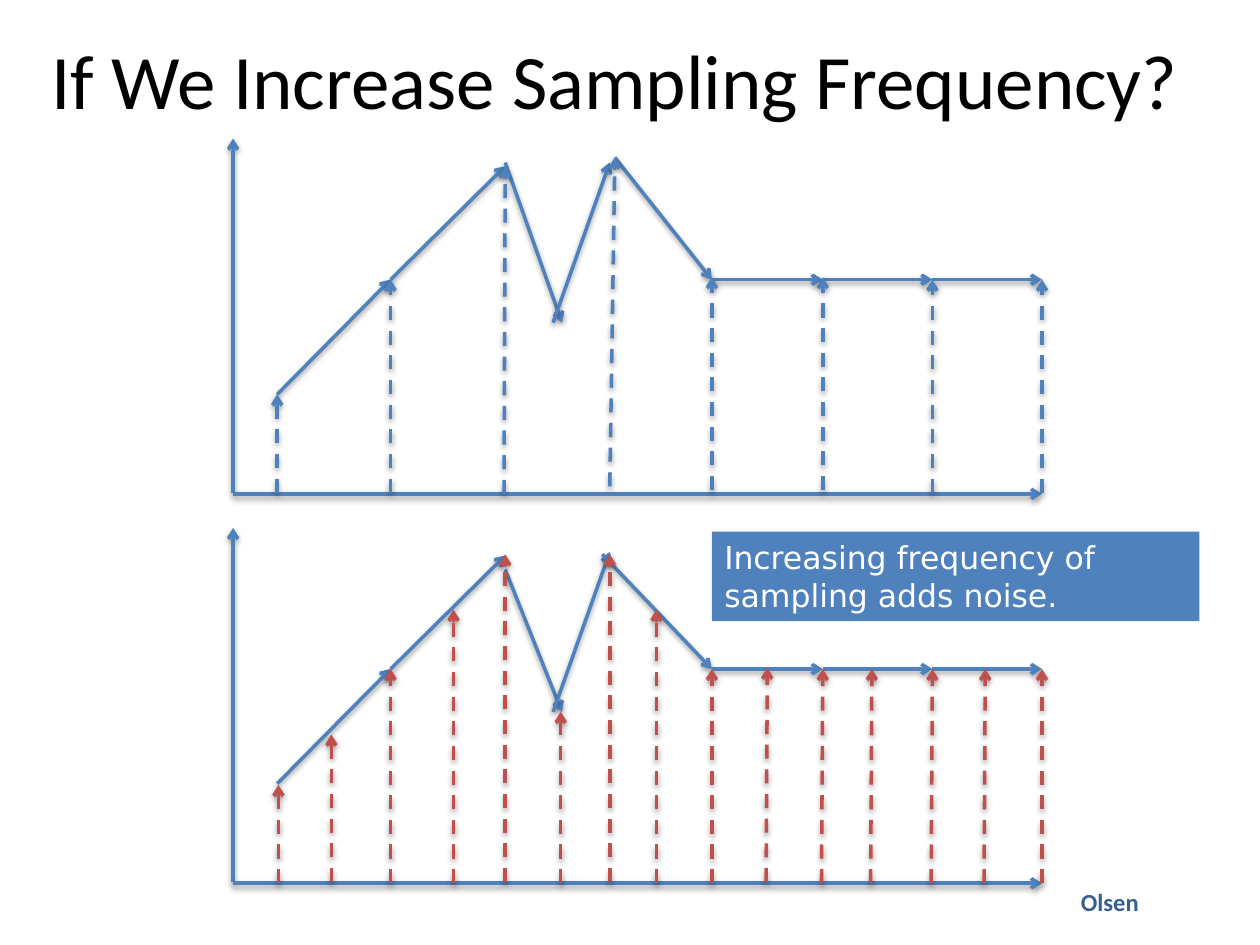
import pptx
import pptx.util
import pptx.dml.color
import pptx.enum.dml
import pptx.enum.shapes
import pptx.enum.text
import pptx.oxml
import pptx.oxml.ns

COLORS = {"blue": "4F81BD", "red": "C0504D", "navy": "365F91",
          "black": "000000", "white": "FFFFFF"}
CELL = 0.1  # inches; the slide is 100 columns by 75 rows
COLS, ROWS = 100, 75
LEFT, RIGHT, HIGH = 18.5, 82.7, 28.2  # extent of both plots

SHADOW = (
    f'<a:effectLst {pptx.oxml.ns.nsdecls("a")}>'
    '<a:outerShdw blurRad="40000" dist="20000" dir="5400000" rotWithShape="0">'
    '<a:srgbClr val="000000"><a:alpha val="38000"/></a:srgbClr>'
    '</a:outerShdw></a:effectLst>')
ARROW = f'<a:tailEnd {pptx.oxml.ns.nsdecls("a")} type="arrow"/>'

# All plot points: column, rows above the time axis.
RISE = [(22, 7.9), (31, 17), (40.1, 26)]
REBOUND = [(43.9, 13.6), (48.4, 26.3)]
FLAT = [(56.5, 17), (65.3, 17), (74, 17), (82.7, 17)]

# Samples: foot column, foot height, tip column, tip height.
COARSE = [
    (22, 0.1, 22, 7.9), (31, 0.1, 31, 17), (40, 0, 40.1, 26),
    (48.4, 0.6, 48.8, 26.7), (56.5, 0.3, 56.5, 17.2),
    (65.3, 0.3, 65.3, 17.2), (74, 0.1, 74, 17), (82.7, 0.1, 82.7, 17)]
FINE = [
    (22.1, 0, 22.1, 7.8), (26.3, 0.1, 26.3, 11.8), (31, 0, 31, 17),
    (36, 0, 36, 25.3 - 0), (40.1, 0.1, 40.1, 26.1), (44.5, 0, 44.5, 13.6),
    (48.4, 0.1, 48.4, 26.1), (52.1, 0, 52.1, 21.7), (56.5, 0, 56.5, 17),
    (60.8, 0.1, 60.9, 17.1), (65.2, 0, 65.3, 17), (69.1, 0, 69.2, 17),
    (73.9, 0, 74, 17), (78.1, 0, 78.2, 17), (82.7, 0, 82.7, 17)]
FINE[3] = (36, 0, 36, 21.7)


def grid(*cells):
    return [pptx.util.Inches(round(cell * CELL, 3)) for cell in cells]


def paint(name):
    return pptx.dml.color.RGBColor.from_string(COLORS[name])


def arrow(slide, start, end, color="blue", dash=False):
    line = slide.shapes.add_connector(
        pptx.enum.shapes.MSO_CONNECTOR.STRAIGHT, *grid(*start, *end))
    line.line.color.rgb = paint(color)
    line.line.width = pptx.util.Pt(2)
    if dash:
        line.line.dash_style = pptx.enum.dml.MSO_LINE.DASH
    line.line._get_or_add_ln().append(pptx.oxml.parse_xml(ARROW))
    line._element.spPr.append(pptx.oxml.parse_xml(SHADOW))


def write(shape, text, size, color, font="Calibri", bold=False):
    frame = shape.text_frame
    frame.word_wrap = True
    frame.text = text
    for para in frame.paragraphs:
        para.alignment = pptx.enum.text.PP_ALIGN.LEFT
        for run in para.runs:
            run.font.name = font
            run.font.size = pptx.util.Pt(size)
            run.font.bold = bold
            run.font.color.rgb = paint(color)
    return frame


def plot(slide, base, dip, fall, stems, color):
    """Draw axes, signal and samples above the row of the time axis.

    dip and fall are the points where the two downward strokes start."""
    def stroke(start, end, color="blue", dash=False):
        arrow(slide, (start[0], base - start[1]), (end[0], base - end[1]),
              color, dash)

    stroke((LEFT, 0.1), (LEFT, HIGH))
    stroke((LEFT, 0), (RIGHT, 0))
    for chain in (RISE, [dip, (44.6, 13.6)], REBOUND, [fall] + FLAT):
        for start, end in zip(chain, chain[1:]):
            stroke(start, end)
    for stem in stems:
        stroke(stem[:2], stem[2:], color, dash=True)


def title(slide, text):
    box = slide.shapes.add_textbox(*grid(2.5, 0, 92.7, 12.5))
    frame = write(box, text, 44, "black")
    frame.vertical_anchor = pptx.enum.text.MSO_ANCHOR.MIDDLE
    frame.paragraphs[0].alignment = pptx.enum.text.PP_ALIGN.CENTER


def credit(slide, text):
    box = slide.shapes.add_textbox(*grid(84.8, 69.4, 12, 4.1))
    frame = write(box, text, 14, "navy", bold=True)
    frame.margin_top = frame.margin_bottom = pptx.util.Inches(0.1)


def callout(slide, text):
    box = slide.shapes.add_shape(
        pptx.enum.shapes.MSO_SHAPE.RECTANGLE, *grid(56.5, 42.2, 38.7, 7.1))
    box.shadow.inherit = False
    box.fill.solid()
    box.fill.fore_color.rgb = paint("blue")
    box.line.fill.background()
    frame = write(box, text, 18, "white", "DejaVu Sans")
    frame.vertical_anchor = pptx.enum.text.MSO_ANCHOR.TOP


def main():
    deck = pptx.Presentation()
    deck.slide_width, deck.slide_height = grid(COLS, ROWS)
    slide = deck.slides.add_slide(deck.slide_layouts[6])
    credit(slide, "Olsen")
    title(slide, "If We Increase Sampling Frequency?")
    plot(slide, 39.2, (40.1, 26.3), (48.8, 26.7), COARSE, "blue")
    plot(slide, 70.1, (40.1, 24.9), (47.8, 26.1), FINE, "red")
    callout(slide, "Increasing frequency of\nsampling adds noise.")
    deck.save("out.pptx")


if __name__ == "__main__":
    main()
